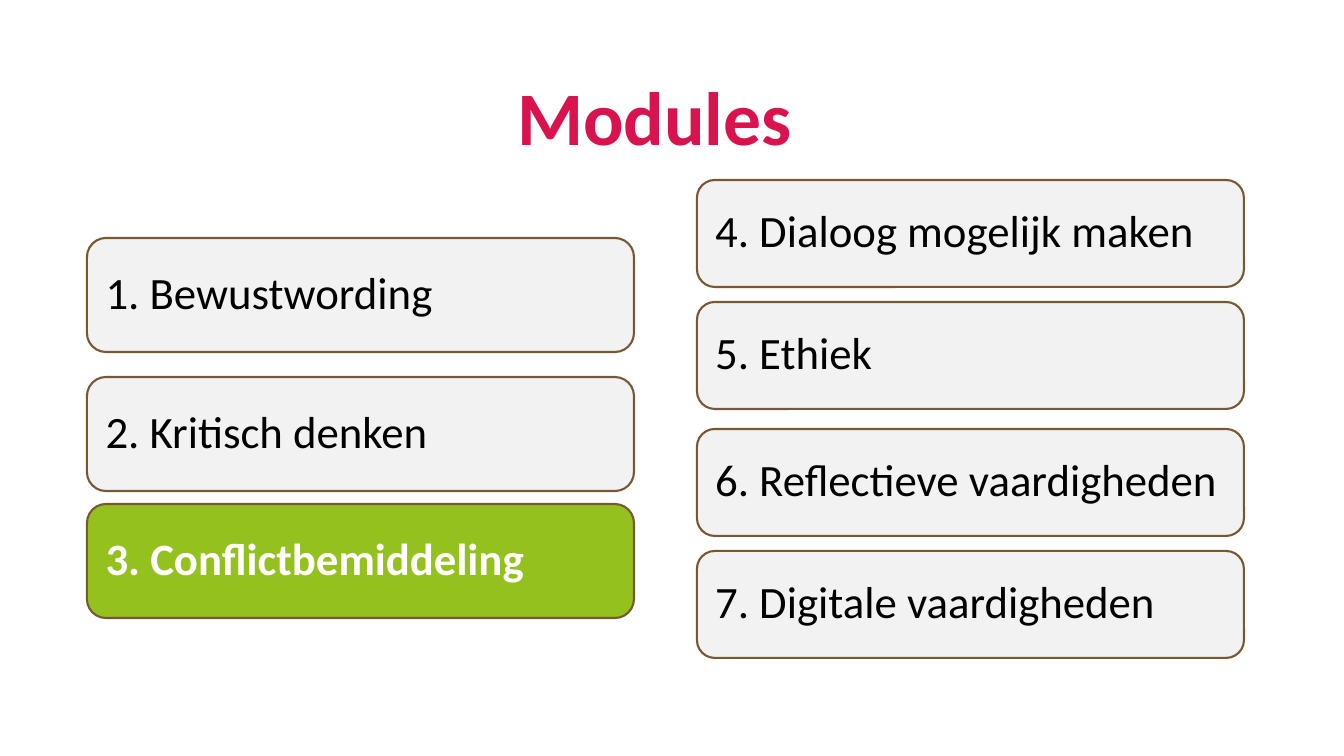
import pptx
import pptx.dml.color
import pptx.enum.shapes
import pptx.enum.text
import pptx.util

PX = 914400 / 100.8
THEME = {
    "font": "Calibri",
    "title_size": 54,
    "module_size": 32,
    "title": "D8134D",
    "text": "000000",
    "active_text": "FFFFFF",
    "box": "F2F2F2",
    "active_box": "95C11F",
    "outline": "785832",
}
ACTIVE_MODULE = "3. Conflictbemiddeling"
BOX_WIDTH = 547
INSET = 18
COLUMNS = [
    (87, 114, [
        (238, "1. Bewustwording"),
        (377, "2. Kritisch denken"),
        (504, ACTIVE_MODULE),
    ]),
    (697, 107, [
        (180, "4. Dialoog mogelijk maken"),
        (302, "5. Ethiek"),
        (429, "6. Reflectieve vaardigheden"),
        (551, "7. Digitale vaardigheden"),
    ]),
]


def px(length):
    return pptx.util.Emu(round(length * PX))


def write_text(shape, text, size, color, bold, alignment):
    shape.text_frame.text = text
    paragraph = shape.text_frame.paragraphs[0]
    paragraph.alignment = alignment
    paragraph.line_spacing = 0.9
    font = paragraph.runs[0].font
    font.name = THEME["font"]
    font.size = pptx.util.Pt(THEME[size])
    font.bold = bold
    font.color.rgb = pptx.dml.color.RGBColor.from_string(THEME[color])


presentation = pptx.Presentation()
presentation.slide_width = px(1344)
presentation.slide_height = px(756)
slide = presentation.slides.add_slide(presentation.slide_layouts.get_by_name("Title Only"))

title = slide.shapes.title
title.left, title.top, title.width, title.height = px(1), px(-30), px(1307), px(197)
title.text_frame.auto_size = pptx.enum.text.MSO_AUTO_SIZE.NONE
title.text_frame.vertical_anchor = pptx.enum.text.MSO_ANCHOR.BOTTOM
write_text(title, "Modules", "title_size", "title", True, pptx.enum.text.PP_ALIGN.CENTER)

for left, height, modules in COLUMNS:
    column = slide.shapes.add_group_shape()
    for top, name in modules:
        active = name == ACTIVE_MODULE
        box = column.shapes.add_shape(
            pptx.enum.shapes.MSO_SHAPE.ROUNDED_RECTANGLE,
            px(left), px(top), px(BOX_WIDTH), px(height))
        box.shadow.inherit = False
        box.fill.solid()
        box.fill.fore_color.rgb = pptx.dml.color.RGBColor.from_string(
            THEME["active_box" if active else "box"])
        box.line.color.rgb = pptx.dml.color.RGBColor.from_string(THEME["outline"])
        box.line.width = pptx.util.Pt(1.5)
        frame = box.text_frame
        frame.word_wrap = True
        frame.vertical_anchor = pptx.enum.text.MSO_ANCHOR.MIDDLE
        # The rounded corners add their own small inset
        frame.margin_left = frame.margin_right = px(INSET - 5)
        write_text(box, name, "module_size", "active_text" if active else "text",
                   active, pptx.enum.text.PP_ALIGN.LEFT)

presentation.save("out.pptx")
